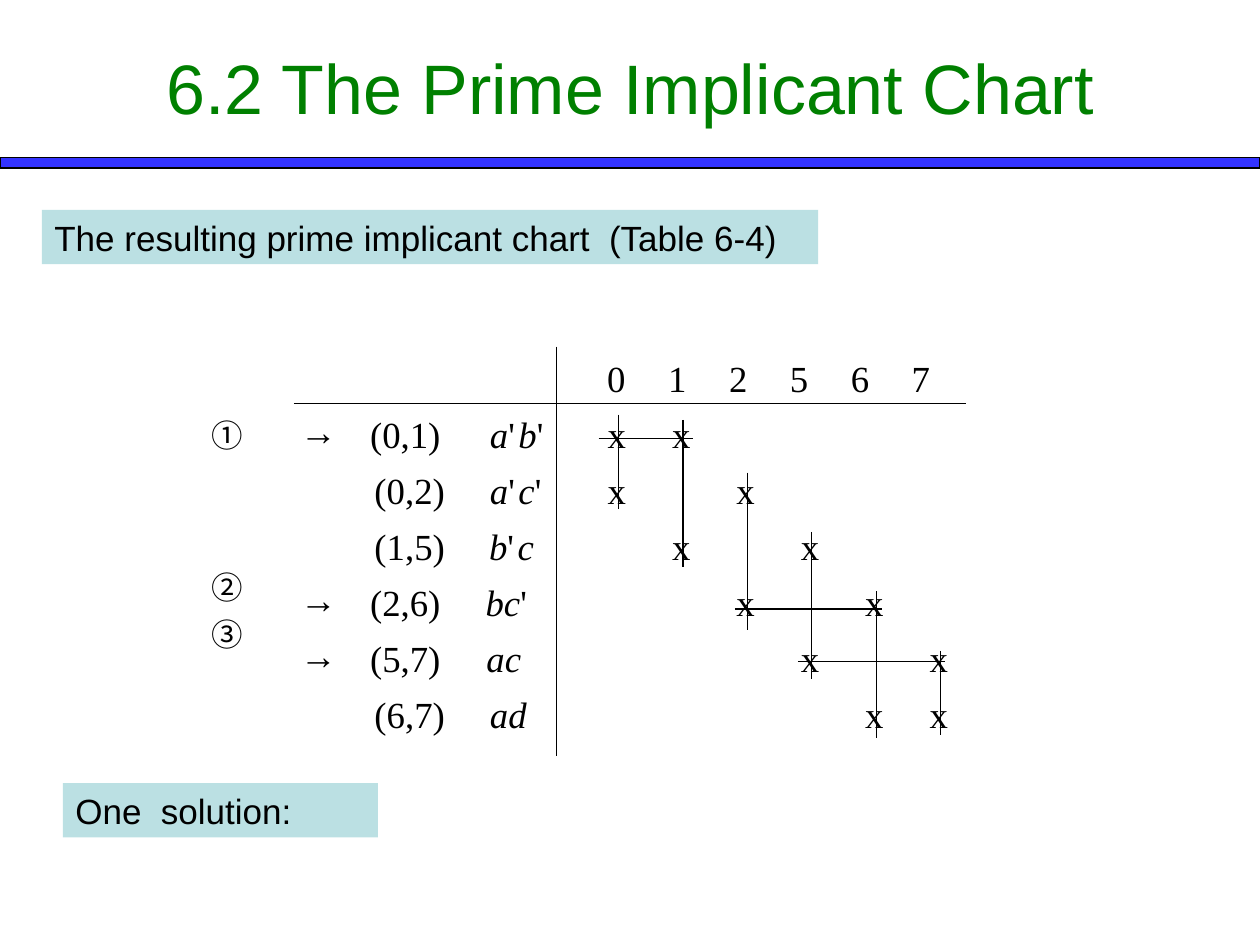
from dataclasses import dataclass

from lxml.etree import SubElement
from pptx import Presentation
from pptx.dml.color import RGBColor
from pptx.enum.shapes import MSO_CONNECTOR, MSO_SHAPE
from pptx.enum.text import MSO_ANCHOR, PP_ALIGN
from pptx.oxml.ns import qn
from pptx.util import Pt


@dataclass(frozen=True)
class Theme:
    title: RGBColor = RGBColor(0x00, 0x80, 0x00)
    ink: RGBColor = RGBColor(0x00, 0x00, 0x00)
    bar: RGBColor = RGBColor(0x33, 0x33, 0xFF)
    caption: RGBColor = RGBColor(0xBB, 0xE0, 0xE3)
    sans: str = "Arial"
    serif: str = "Times New Roman"
    cjk: str = "Noto Sans CJK KR"
    title_size: int = 40
    caption_size: int = 20
    chart_size: int = 21
    number_size: int = 18


THEME = Theme()

# Chart grid, in points
HEADER_TOP, ROW_PITCH, ROW_HEIGHT = 203.5, 32, 25
DIGIT_LEFT, DIGIT_PITCH = 347, 34.8
COLUMN_LEFT, COLUMN_PITCH = 353.5, 36.8
MARK_OFFSET = 6.25
MINTERMS = [0, 1, 2, 5, 6, 7]

# Covered minterms, term, left of the term, chosen for the solution
IMPLICANTS = [
    ((0, 1), "a'b'", 280, True),
    ((0, 2), "a'c'", 280, False),
    ((1, 5), "b'c", 279.5, False),
    ((2, 6), "bc'", 277.5, True),
    ((5, 7), "ac", 278, True),
    ((6, 7), "ad", 280, False),
]

# Strike-out lines: top and bottom by minterm; height, left and right by row
COLUMN_STRIKES = {
    0: (237, 291), 1: (240, 324), 2: (270, 360),
    5: (304, 388), 6: (338, 422), 7: (372, 420),
}
ROW_STRIKES = [(250.5, 342, 396), (348, 420, 504), (378, 456, 540)]


def column_x(minterm):
    return COLUMN_LEFT + MINTERMS.index(minterm) * COLUMN_PITCH


def add_run(paragraph, text, size, color, font, italic=False):
    run = paragraph.add_run()
    run.text = text
    run.font.size = Pt(size)
    run.font.color.rgb = color
    run.font.name = font
    run.font.italic = italic
    return run


def add_line(slide, x1, y1, x2, y2):
    line = slide.shapes.add_connector(
        MSO_CONNECTOR.STRAIGHT, Pt(x1), Pt(y1), Pt(x2), Pt(y2))
    line.line.color.rgb = THEME.ink
    line.line.width = Pt(0.75)
    SubElement(line.element.spPr, qn("a:effectLst"))


def add_label(slide, left, top, width):
    """Add a box without margins and return its paragraph."""
    box = slide.shapes.add_textbox(Pt(left), Pt(top), Pt(width), Pt(ROW_HEIGHT))
    frame = box.text_frame
    frame.word_wrap = True
    frame.margin_left = frame.margin_right = 0
    frame.margin_top = frame.margin_bottom = 0
    return frame.paragraphs[0]


def add_chart_label(slide, text, left, top, width, font=THEME.serif):
    paragraph = add_label(slide, left, top, width)
    add_run(paragraph, text, THEME.chart_size, THEME.ink, font)


def add_term(slide, term, left, top):
    """Add a product term: italic letters, upright primes."""
    paragraph = add_label(slide, left, top, 36)
    for symbol in term:
        run = add_run(paragraph, symbol, THEME.chart_size, THEME.ink,
                      THEME.serif, italic=symbol.isalpha())
        if symbol == "'":
            run.font._element.set("spc", "200")


def add_caption(slide, text, left, top, width):
    caption = slide.shapes.add_textbox(Pt(left), Pt(top), Pt(width), Pt(31))
    caption.fill.solid()
    caption.fill.fore_color.rgb = THEME.caption
    caption.text_frame.word_wrap = True
    add_run(caption.text_frame.paragraphs[0], text,
            THEME.caption_size, THEME.ink, THEME.sans)


def add_title(slide, text):
    title = slide.shapes.title
    title.left, title.top, title.width, title.height = Pt(36), Pt(10), Pt(648), Pt(78.5)
    title.text_frame.vertical_anchor = MSO_ANCHOR.MIDDLE
    paragraph = title.text_frame.paragraphs[0]
    paragraph.alignment = PP_ALIGN.CENTER
    add_run(paragraph, text, THEME.title_size, THEME.title, THEME.sans)


def add_title_bar(slide):
    bar = slide.shapes.add_shape(MSO_SHAPE.RECTANGLE, 0, Pt(90), Pt(720), Pt(6))
    bar.shadow.inherit = False
    bar.fill.solid()
    bar.fill.fore_color.rgb = THEME.bar
    bar.line.color.rgb = THEME.ink
    bar.line.width = Pt(0.75)


def add_step_numbers(slide):
    box = slide.shapes.add_textbox(Pt(114), Pt(234), Pt(42), Pt(159))
    frame = box.text_frame
    frame.word_wrap = True
    for index, (number, gap) in enumerate([("①", 0), ("②", 65.5), ("③", 5)]):
        paragraph = frame.add_paragraph() if index else frame.paragraphs[0]
        paragraph.space_before = Pt(gap)
        run = add_run(paragraph, number, THEME.number_size, THEME.ink, THEME.cjk)
        SubElement(run.font._element, qn("a:ea")).set("typeface", THEME.cjk)


def add_implicant_chart(slide):
    # Axes and minterm headings
    add_line(slide, 168, 230.5, 552, 230.5)
    add_line(slide, 318, 198, 318, 432)
    for index, minterm in enumerate(MINTERMS):
        add_chart_label(slide, str(minterm), DIGIT_LEFT + index * DIGIT_PITCH,
                        HEADER_TOP, 14)

    # One row for each prime implicant
    for row, (covered, term, term_left, chosen) in enumerate(IMPLICANTS, start=1):
        top = HEADER_TOP + row * ROW_PITCH
        if chosen:
            add_chart_label(slide, "→", 171.5, top - 2, 24, THEME.sans)
        pair = f"({covered[0]},{covered[1]})"
        add_chart_label(slide, pair, 211.5 if chosen else 214, top, 46)
        add_term(slide, term, term_left, top)
        for minterm in covered:
            add_chart_label(slide, "x", column_x(minterm) - MARK_OFFSET, top, 14)

    # Strike-out lines
    for minterm, (top, bottom) in COLUMN_STRIKES.items():
        add_line(slide, column_x(minterm), top, column_x(minterm), bottom)
    for y, left, right in ROW_STRIKES:
        add_line(slide, left, y, right, y)


def main():
    presentation = Presentation()
    presentation.slide_width, presentation.slide_height = Pt(720), Pt(540)
    slide = presentation.slides.add_slide(presentation.slide_layouts[5])

    # Heading
    add_title_bar(slide)
    add_title(slide, "6.2 The Prime Implicant Chart")

    # Captions
    add_caption(slide, "The resulting prime implicant chart  (Table 6-4)", 24, 120, 443.5)
    add_caption(slide, "One  solution:", 36, 447.5, 180)

    # Chart
    add_step_numbers(slide)
    add_implicant_chart(slide)

    presentation.save("out.pptx")


if __name__ == "__main__":
    main()
